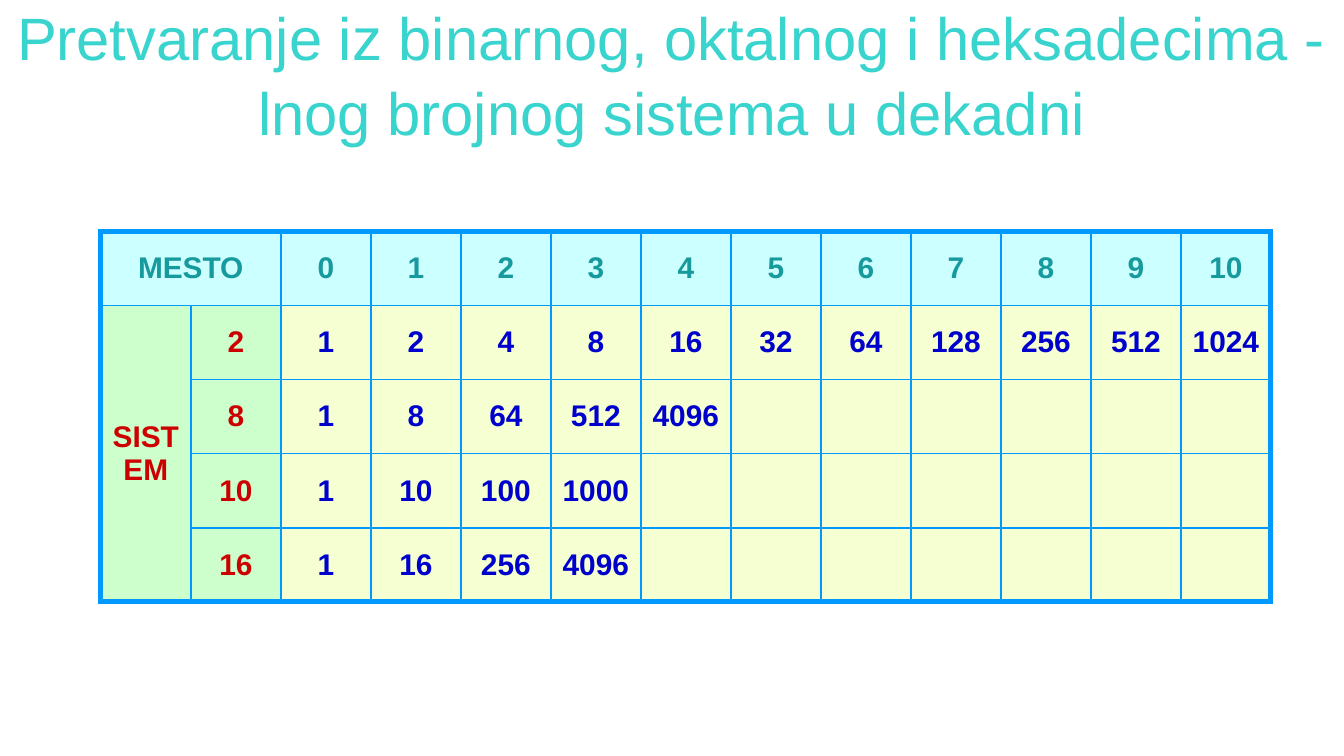
"""Build the slide with the table of place values in four number systems."""
from typing import NamedTuple

import lxml.etree
import pptx
import pptx.dml.color
import pptx.enum.text
import pptx.oxml.ns
import pptx.util

Pt = pptx.util.Pt
PLACES = 11
COLUMNS, ROWS = PLACES + 2, 5
COLUMN_WIDTH, ROW_HEIGHT = 48.24, 39.7
BORDER = "0099FF"
THIN, THICK = 1, 3


class Style(NamedTuple):
    fill: str
    color: str


class System(NamedTuple):
    base: int
    shown: int


HEADER = Style("CCFFFF", "179A9D")
SIDE = Style("CCFFCC", "CC0000")
VALUE = Style("F5FFD1", "0000CC")
SYSTEMS = [System(2, 11), System(8, 5), System(10, 4), System(16, 4)]


def rgb(color: str) -> pptx.dml.color.RGBColor:
    return pptx.dml.color.RGBColor.from_string(color)


def write(frame, text: str, *, size: float, color: str, bold: bool = False,
          spacing: float = 1.0) -> None:
    paragraph = frame.paragraphs[0]
    paragraph.alignment = pptx.enum.text.PP_ALIGN.CENTER
    paragraph.line_spacing = spacing
    run = paragraph.add_run()
    run.text = text
    run.font.name = "Arial"
    run.font.size = Pt(size)
    run.font.bold = bold
    run.font.color.rgb = rgb(color)


def draw_borders(cell, row: int, column: int) -> None:
    last_row = row + (cell.span_height if cell.is_merge_origin else 1) == ROWS
    last_column = column + (cell.span_width if cell.is_merge_origin else 1) == COLUMNS
    outer = {"lnL": column == 0, "lnR": last_column, "lnT": row == 0, "lnB": last_row}
    properties = cell._tc.get_or_add_tcPr()
    qn = pptx.oxml.ns.qn
    for position, (edge, is_outer) in enumerate(outer.items()):
        line = lxml.etree.Element(qn(f"a:{edge}"), w=str(Pt(THICK if is_outer else THIN)))
        fill = lxml.etree.SubElement(line, qn("a:solidFill"))
        lxml.etree.SubElement(fill, qn("a:srgbClr"), val=BORDER)
        properties.insert(position, line)


def draw_cell(table, row: int, column: int, text: str, style: Style) -> None:
    cell = table.cell(row, column)
    cell.fill.solid()
    cell.fill.fore_color.rgb = rgb(style.fill)
    cell.vertical_anchor = pptx.enum.text.MSO_ANCHOR.MIDDLE
    cell.margin_left = cell.margin_right = Pt(2.88)
    cell.margin_top = cell.margin_bottom = Pt(1.44)
    if text:
        write(cell.text_frame, text, size=16, color=style.color, bold=True)
    draw_borders(cell, row, column)


def draw_title(slide) -> None:
    title = slide.shapes.add_textbox(Pt(0), Pt(11.5), Pt(720), Pt(54.7))
    title.text_frame.word_wrap = True
    title.text_frame.vertical_anchor = pptx.enum.text.MSO_ANCHOR.MIDDLE
    write(title.text_frame,
          "Pretvaranje iz binarnog, oktalnog i heksadecima - lnog brojnog sistema u dekadni",
          size=32, color="38D4CD", spacing=1.05)


def draw_place_values(slide) -> None:
    table = slide.shapes.add_table(
        ROWS, COLUMNS, Pt(54), Pt(124),
        Pt(COLUMN_WIDTH * COLUMNS), Pt(ROW_HEIGHT * ROWS)).table
    table.first_row = table.horz_banding = False
    for column in table.columns:
        column.width = Pt(COLUMN_WIDTH)
    for row in table.rows:
        row.height = Pt(ROW_HEIGHT)
    table.cell(0, 0).merge(table.cell(0, 1))
    table.cell(1, 0).merge(table.cell(ROWS - 1, 0))

    header = ["MESTO", ""] + [str(place) for place in range(PLACES)]
    for column, text in enumerate(header):
        draw_cell(table, 0, column, text, HEADER)
    for row, system in enumerate(SYSTEMS, start=1):
        draw_cell(table, row, 0, "SISTEM" if row == 1 else "", SIDE)
        draw_cell(table, row, 1, str(system.base), SIDE)
        for place in range(PLACES):
            text = str(system.base ** place) if place < system.shown else ""
            draw_cell(table, row, place + 2, text, VALUE)
    table.cell(1, 0)._tc.get_or_add_tcPr().set("vert", "eaVert")


def main() -> None:
    presentation = pptx.Presentation()
    presentation.slide_width, presentation.slide_height = Pt(720), Pt(405)
    slide = presentation.slides.add_slide(presentation.slide_layouts[6])
    draw_title(slide)
    draw_place_values(slide)
    presentation.save("out.pptx")


if __name__ == "__main__":
    main()
